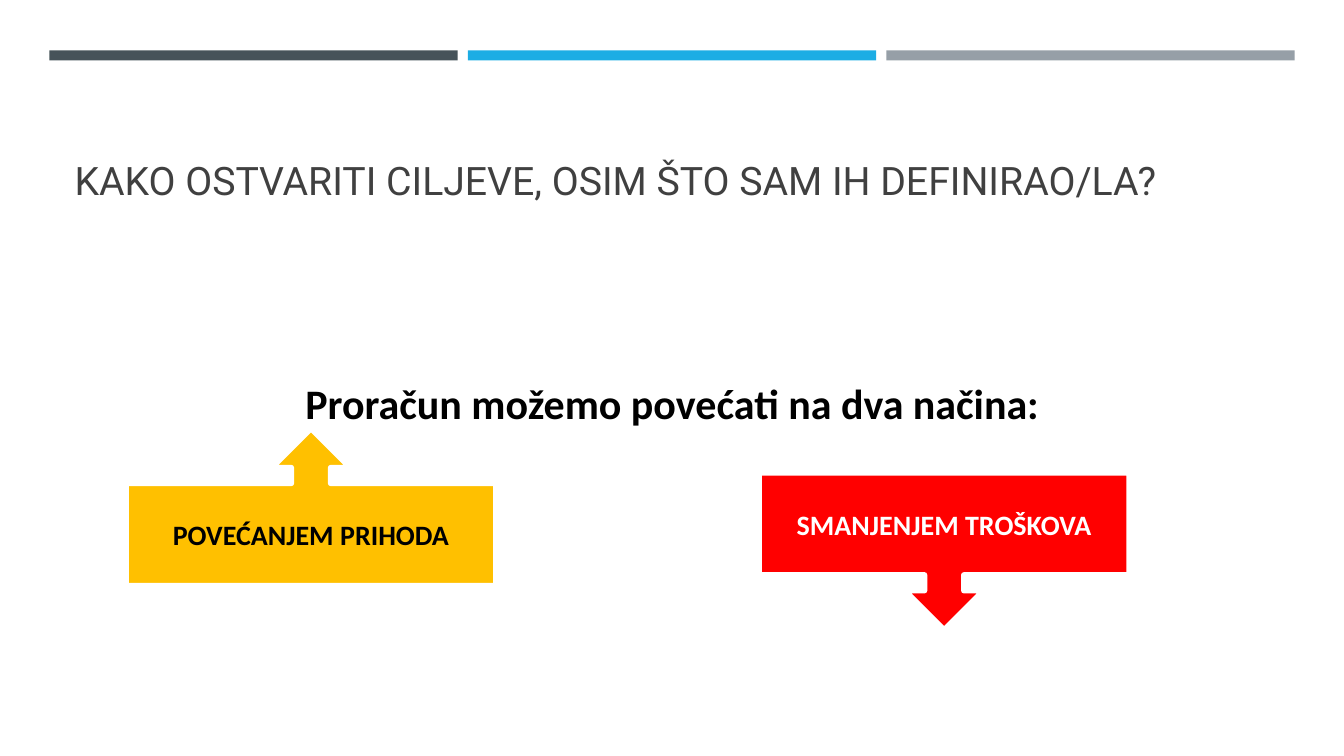
from pptx import Presentation
from pptx import util as u
from pptx.dml.color import RGBColor
from pptx.enum import shapes, text

COLOURS = {
    "slate": "465359", "blue": "1CADE4", "grey": "969FA7", "title": "404040",
    "black": "000000", "white": "FFFFFF", "amber": "FFC000", "red": "FF0000",
}


def rgb(name):
    return RGBColor.from_string(COLOURS[name])


def write(frame, wording, size, font, colour, bold, align, anchor):
    """Put one formatted run into a text frame and return its paragraph."""
    frame.word_wrap = True
    frame.auto_size = text.MSO_AUTO_SIZE.NONE
    frame.vertical_anchor = anchor
    paragraph = frame.paragraphs[0]
    paragraph.alignment = align
    run = paragraph.add_run()
    run.text = wording
    run.font.size = u.Pt(size)
    run.font.name = font
    run.font.bold = bold
    run.font.color.rgb = rgb(colour)
    return paragraph


deck = Presentation()
deck.slide_width, deck.slide_height = u.Inches(13.33), u.Inches(7.5)
slide = deck.slides.add_slide(deck.slide_layouts.get_by_name("Title Only"))

# Three equal bars across the top
BAR_LEFT, BAR_WIDTH, BAR_STEP = 0.49, 4.05, 4.15
for column, colour in enumerate(("slate", "blue", "grey")):
    bar = slide.shapes.add_shape(
        shapes.MSO_SHAPE.RECTANGLE,
        u.Inches(BAR_LEFT + column * BAR_STEP), u.Inches(0.5),
        u.Inches(BAR_WIDTH), u.Inches(0.1))
    bar.shadow.inherit = False
    bar.fill.solid()
    bar.fill.fore_color.rgb = rgb(colour)
    bar.line.fill.background()

# Title and lead sentence share the same margins
MARGIN, CONTENT_WIDTH = u.Inches(0.64), u.Inches(12.06)
title = slide.shapes.title
title.left, title.top = MARGIN, u.Inches(0.77)
title.width, title.height = CONTENT_WIDTH, u.Inches(1.3)
write(title.text_frame, "KAKO OSTVARITI CILJEVE, OSIM ŠTO SAM IH DEFINIRAO/LA?",
      28, "Roboto", "title", False, text.PP_ALIGN.LEFT, text.MSO_ANCHOR.BOTTOM)

lead = slide.shapes.add_textbox(MARGIN, u.Inches(3.6), CONTENT_WIDTH, u.Inches(0.8))
write(lead.text_frame, "Proračun možemo povećati na dva načina:",
      30, "Calibri", "black", True, text.PP_ALIGN.CENTER, text.MSO_ANCHOR.MIDDLE)

# The two ways: income up, costs down
ways = (
    ("POVEĆANJEM PRIHODA", shapes.MSO_SHAPE.UP_ARROW_CALLOUT, 1.25, 4.25, "amber", "black"),
    ("SMANJENJEM TROŠKOVA", shapes.MSO_SHAPE.DOWN_ARROW_CALLOUT, 7.53, 4.69, "red", "white"),
)
for wording, arrow, left, top, fill, ink in ways:
    way = slide.shapes.add_shape(
        arrow, u.Inches(left), u.Inches(top), u.Inches(3.67), u.Inches(1.56))
    for index, share in enumerate((0.25, 0.25, 0.25, 0.65)):
        way.adjustments[index] = share
    way.shadow.inherit = False
    way.fill.solid()
    way.fill.fore_color.rgb = rgb(fill)
    way.line.color.rgb = rgb("white")
    way.line.width = u.Pt(4)
    label = write(way.text_frame, wording, 20, "Calibri", ink, True,
                  text.PP_ALIGN.CENTER, text.MSO_ANCHOR.MIDDLE)
    label.space_before = u.Pt(10)

deck.save("out.pptx")
